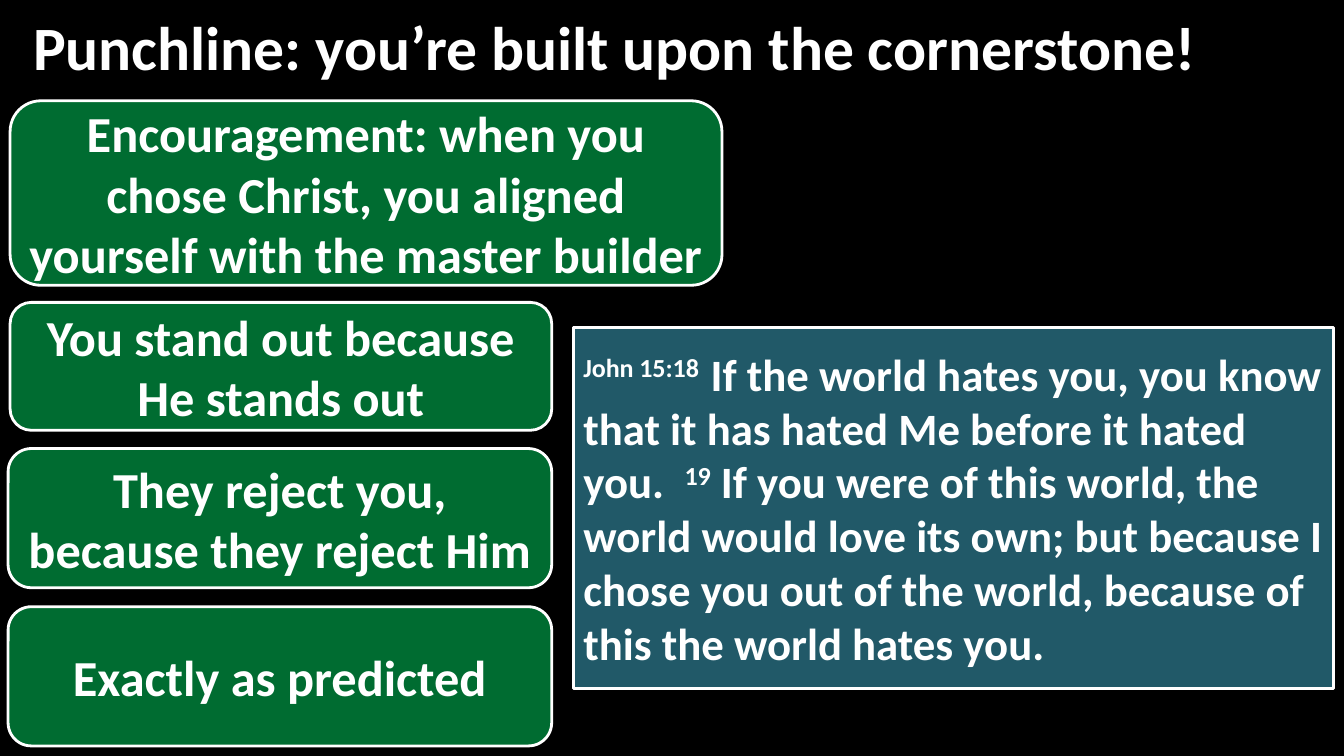
from pptx import Presentation
from pptx.dml.color import RGBColor
from pptx.enum.shapes import MSO_SHAPE
from pptx.enum.text import MSO_ANCHOR, MSO_AUTO_SIZE, PP_ALIGN
from pptx.util import Pt

BLACK = RGBColor(0x00, 0x00, 0x00)
WHITE = RGBColor(0xFF, 0xFF, 0xFF)
GREEN = RGBColor(0x00, 0x6C, 0x31)
TEAL = RGBColor(0x21, 0x59, 0x68)

FRAME_FORMAT = {
    "word_wrap": True,
    "auto_size": MSO_AUTO_SIZE.NONE,
    "vertical_anchor": MSO_ANCHOR.MIDDLE,
    "margin_left": Pt(7.2),
    "margin_right": Pt(7.2),
    "margin_top": Pt(3.6),
    "margin_bottom": Pt(3.6),
}


def write(shape, pieces, size, align):
    for key, value in FRAME_FORMAT.items():
        setattr(shape.text_frame, key, value)
    paragraph = shape.text_frame.paragraphs[0]
    paragraph.alignment = align
    for text, raised in pieces:
        run = paragraph.add_run()
        run.text = text
        font_format = {"name": "Calibri", "size": Pt(size), "bold": True}
        for key, value in font_format.items():
            setattr(run.font, key, value)
        run.font.color.rgb = WHITE
        if raised:
            run.font._element.set("baseline", "30000")


def add_panel(preset, place, color):
    panel = slide.shapes.add_shape(preset, *map(Pt, place))
    panel.shadow.inherit = False
    panel.fill.solid()
    panel.fill.fore_color.rgb = color
    panel.line.color.rgb = WHITE
    panel.line.width = Pt(2)
    return panel


deck = Presentation()
deck.slide_width = Pt(960)
deck.slide_height = Pt(540)
slide = deck.slides.add_slide(deck.slide_layouts[5])
slide.background.fill.solid()
slide.background.fill.fore_color.rgb = BLACK

punchline = slide.shapes.title
punchline_place = {"left": -2.9, "top": 5.8, "width": 884.9, "height": 54}
for side, length in punchline_place.items():
    setattr(punchline, side, Pt(length))
write(punchline, [("Punchline: you’re built upon the cornerstone!", False)], 44, PP_ALIGN.CENTER)

encouragements = [
    ("Encouragement: when you chose Christ, you aligned yourself with the master builder",
     (7.2, 72, 508.5, 131.8)),
    ("You stand out because He stands out", (7.2, 216, 386.9, 91.4)),
    ("They reject you, because they reject Him", (5.8, 320.4, 388.3, 99.4)),
    ("Exactly as predicted", (5.8, 433.4, 388.3, 99.4)),
]
for statement, place in encouragements:
    encouragement = add_panel(MSO_SHAPE.ROUNDED_RECTANGLE, place, GREEN)
    write(encouragement, [(statement, False)], 36, PP_ALIGN.CENTER)

verses = [
    ("John 15:18  ", True),
    ("If the world hates you, you know that it has hated Me before it hated you.  ", False),
    ("19", True),
    (" If you were of this world, the world would love its own; but because I chose you "
     "out of the world, because of this the world hates you.", False),
]
scripture = add_panel(MSO_SHAPE.RECTANGLE, (409.6, 233.9, 543, 257.8), TEAL)
write(scripture, verses, 32, PP_ALIGN.LEFT)

deck.save("out.pptx")
